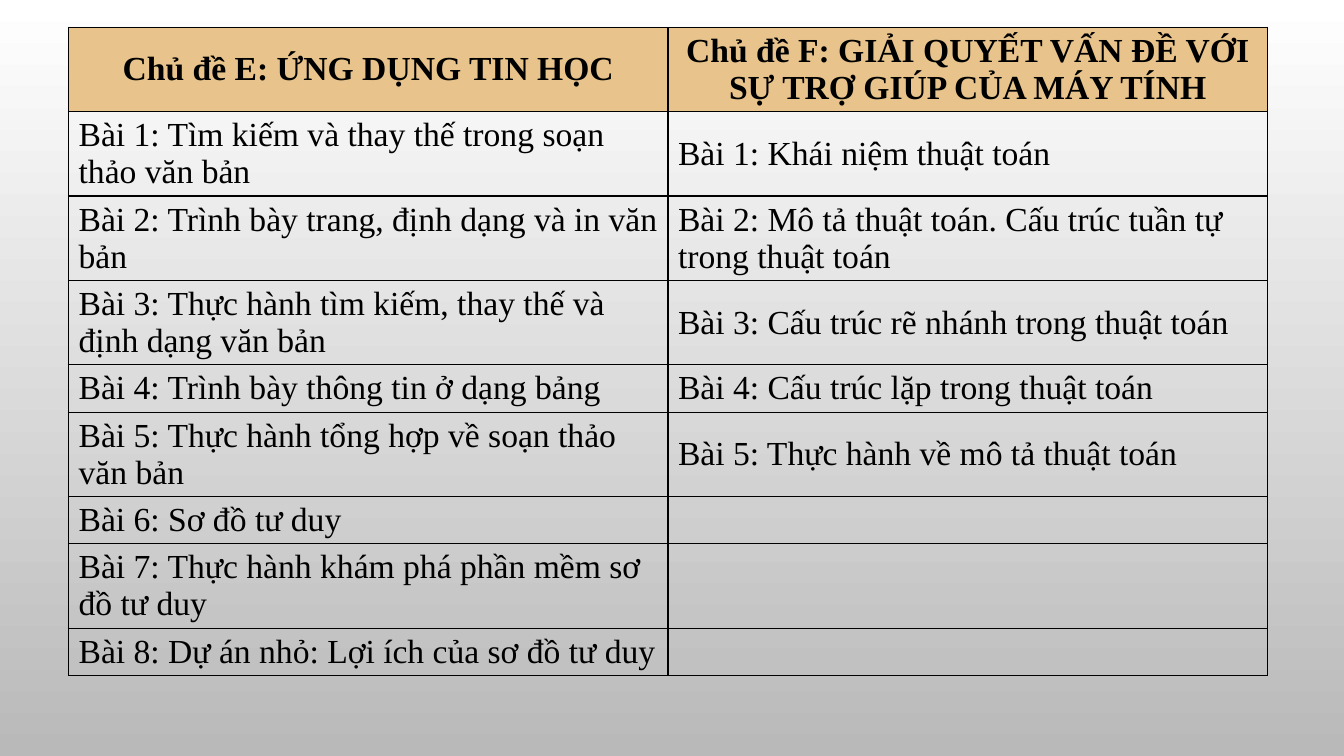
from itertools import zip_longest

from lxml.etree import SubElement
from pptx import Presentation
from pptx.dml.color import RGBColor
from pptx.enum.text import MSO_ANCHOR, PP_ALIGN
from pptx.oxml.ns import qn
from pptx.util import Inches, Pt

BLACK = RGBColor(0x00, 0x00, 0x00)
WHITE = RGBColor(0xFF, 0xFF, 0xFF)
GRAY = RGBColor(0xB9, 0xB9, 0xB9)
SAND = RGBColor(0xE8, 0xC4, 0x8C)
FONT_NAME = "Times New Roman"

TOPICS = {
    "Chủ đề E: ỨNG DỤNG TIN HỌC": [
        "Bài 1: Tìm kiếm và thay thế trong soạn thảo văn bản",
        "Bài 2: Trình bày trang, định dạng và in văn bản",
        "Bài 3: Thực hành tìm kiếm, thay thế và định dạng văn bản",
        "Bài 4: Trình bày thông tin ở dạng bảng",
        "Bài 5: Thực hành tổng hợp về soạn thảo văn bản",
        "Bài 6: Sơ đồ tư duy",
        "Bài 7: Thực hành khám phá phần mềm sơ đồ tư duy",
        "Bài 8: Dự án nhỏ: Lợi ích của sơ đồ tư duy",
    ],
    "Chủ đề F: GIẢI QUYẾT VẤN ĐỀ VỚI SỰ TRỢ GIÚP CỦA MÁY TÍNH": [
        "Bài 1: Khái niệm thuật toán",
        "Bài 2: Mô tả thuật toán. Cấu trúc tuần tự trong thuật toán",
        "Bài 3: Cấu trúc rẽ nhánh trong thuật toán",
        "Bài 4: Cấu trúc lặp trong thuật toán",
        "Bài 5: Thực hành về mô tả thuật toán",
    ],
}


def set_background(slide):
    """Fill the slide with a vertical gradient from white to gray."""
    fill = slide.background.fill
    fill.gradient()
    fill.gradient_angle = 270
    for stop, color in zip(fill.gradient_stops, (WHITE, GRAY)):
        stop.color.rgb = color


def set_borders(cell):
    """Draw a thin black line on all four sides of a cell."""
    properties = cell._tc.get_or_add_tcPr()
    for position, side in enumerate(("a:lnL", "a:lnR", "a:lnT", "a:lnB")):
        line = SubElement(properties, qn(side), w=str(Pt(1)))
        fill = SubElement(line, qn("a:solidFill"))
        SubElement(fill, qn("a:srgbClr"), val=str(BLACK))
        properties.insert(position, line)


def format_cell(cell, text, is_header):
    """Write and style one cell of the lesson table."""
    cell.vertical_anchor = MSO_ANCHOR.MIDDLE
    if is_header:
        cell.fill.solid()
        cell.fill.fore_color.rgb = SAND
    else:
        cell.fill.background()
    set_borders(cell)
    if not text:
        return
    cell.text = text
    paragraph = cell.text_frame.paragraphs[0]
    paragraph.alignment = PP_ALIGN.CENTER if is_header else PP_ALIGN.LEFT
    paragraph.font.name = FONT_NAME
    paragraph.font.size = Pt(24)
    paragraph.font.bold = is_header
    paragraph.font.color.rgb = BLACK


def add_lesson_table(slide, left, top, width, height):
    """Add the table with one column of lessons for each topic."""
    rows = [tuple(TOPICS), *zip_longest(*TOPICS.values(), fillvalue="")]
    frame = slide.shapes.add_table(len(rows), len(TOPICS), left, top, width, height)
    table = frame.table
    table.first_row = False
    table.horz_banding = False
    for row_index, texts in enumerate(rows):
        table.rows[row_index].height = Inches(0.41)
        for column_index, text in enumerate(texts):
            format_cell(table.cell(row_index, column_index), text, row_index == 0)
    frame.height = height


def main():
    """Build the presentation and save it."""
    presentation = Presentation()
    presentation.slide_width = Inches(13.33)
    presentation.slide_height = Inches(7.5)
    slide = presentation.slides.add_slide(presentation.slide_layouts[6])
    set_background(slide)
    add_lesson_table(slide, Inches(0.68), Inches(0.27), Inches(11.89), Inches(6.9))
    presentation.save("out.pptx")


if __name__ == "__main__":
    main()
